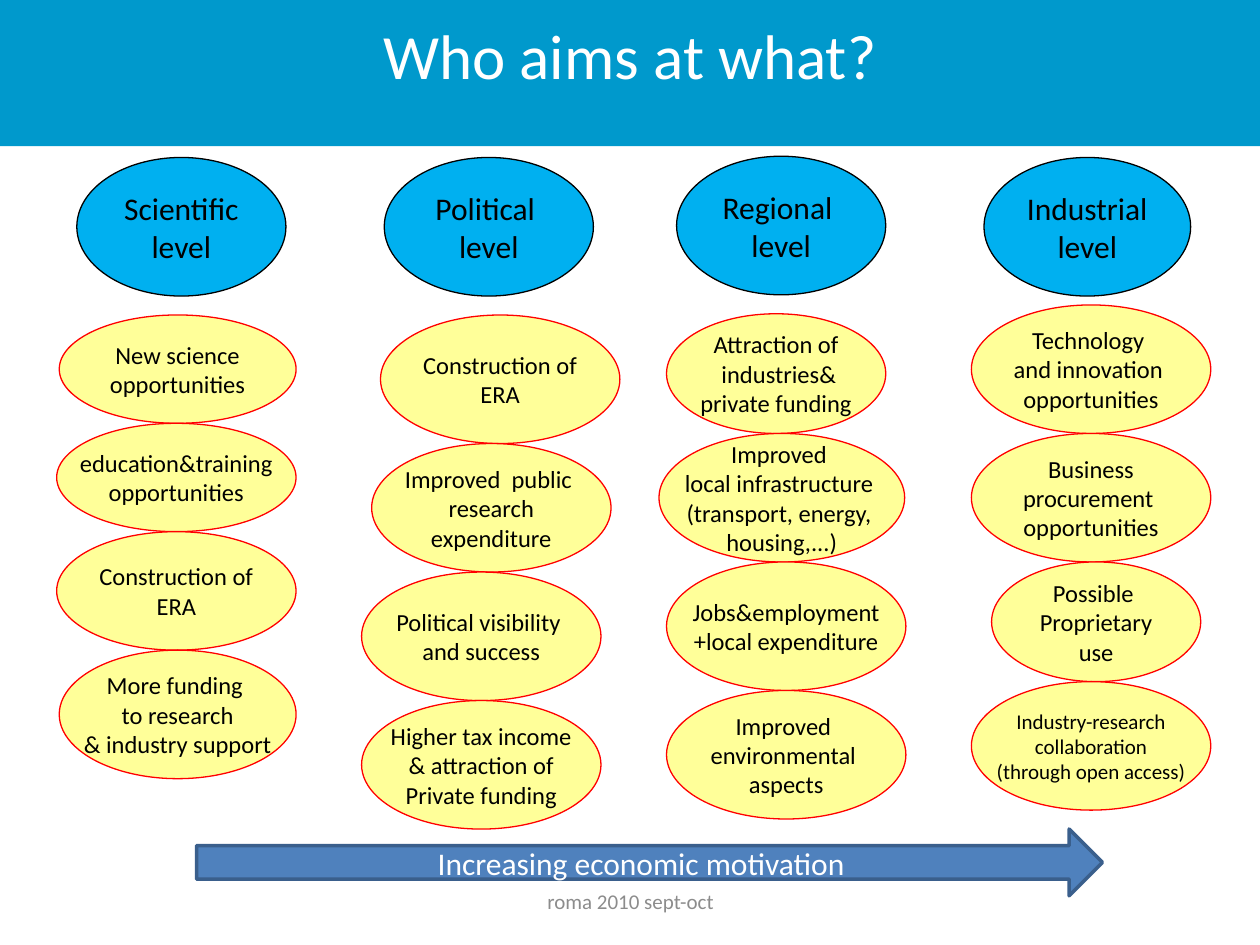
import pptx
import pptx.util
import pptx.dml.color
import pptx.enum.shapes
import pptx.enum.text

Inches, Pt = pptx.util.Inches, pptx.util.Pt
RGB = pptx.dml.color.RGBColor
Kind = pptx.enum.shapes.MSO_SHAPE
Align = pptx.enum.text.PP_ALIGN
Anchor = pptx.enum.text.MSO_ANCHOR

TEAL = RGB(0x00, 0x99, 0xCC)
SKY = RGB(0x00, 0xB0, 0xF0)
CREAM = RGB(0xFF, 0xFF, 0x99)
RED = RGB(0xFF, 0x00, 0x00)
BLUE = RGB(0x4F, 0x81, 0xBD)
NAVY = RGB(0x3A, 0x5F, 0x8C)
GREY = RGB(0x8C, 0x8C, 0x8C)
BLACK = RGB(0, 0, 0)
WHITE = RGB(255, 255, 255)

# Content: each level has a head (text, left, top, width) and a stack of
# aims (text, left, width, height, size) that touch one another from "top" down
TITLE = "Who aims at what?"
ARROW = "Increasing economic motivation"
FOOTER = "roma 2010 sept-oct"
HEAD_H = 1.1
LEVELS = [
    {"head": ("Scientific\nlevel", 0.61, 1.25, 1.66), "top": 2.5, "aims": [
        ("New science\nopportunities", 0.47, 1.88, 0.86, 14),
        ("education&training\nopportunities", 0.45, 1.9, 0.86, 14),
        ("Construction of\nERA", 0.45, 1.9, 0.94, 14),
        ("More funding \nto research\n& industry support", 0.47, 1.88, 1.02, 14)]},
    {"head": ("Political \nlevel", 3.05, 1.25, 1.66), "top": 2.5, "aims": [
        ("Construction of\nERA", 3.02, 1.9, 1.02, 14),
        ("Improved  public \nresearch\nexpenditure", 2.95, 1.9, 1.02, 14),
        ("Political visibility \nand success", 2.87, 1.9, 1.02, 14),
        ("Higher tax income\n& attraction of\nPrivate funding", 2.87, 1.9, 1.02, 14)]},
    {"head": ("Regional \nlevel", 5.37, 1.24, 1.66), "top": 2.49, "aims": [
        ("Attraction of\n industries&\nprivate funding", 5.29, 1.74, 0.95, 14),
        ("Improved \nlocal infrastructure \n(transport, energy, \nhousing,...)",
         5.23, 1.95, 1.02, 14),
        ("Jobs&employment\n+local expenditure", 5.29, 1.9, 1.02, 14),
        ("Improved \nenvironmental \naspects", 5.29, 1.9, 1.02, 14)]},
    {"head": ("Industrial\nlevel", 7.81, 1.25, 1.64), "top": 2.42, "aims": [
        ("Technology \nand innovation \nopportunities", 7.71, 1.9, 1.02, 14),
        ("Business\nprocurement \nopportunities", 7.71, 1.9, 1.02, 14),
        ("Possible \nProprietary\nuse", 7.87, 1.66, 0.95, 14),
        ("Industry-research\ncollaboration\n(through open access)", 7.71, 1.9, 1.02, 12)]},
]


def write(shape, text, size, color, wrap=True):
    frame = shape.text_frame
    frame.text = text
    frame.word_wrap = wrap
    frame.vertical_anchor = Anchor.MIDDLE
    style = {"name": "Calibri", "size": Pt(size)}
    for para in frame.paragraphs:
        para.alignment = Align.CENTER
        for run in para.runs:
            for key, value in style.items():
                setattr(run.font, key, value)
            run.font.color.rgb = color


def draw(slide, kind, box, fill, line=None, width=0.75):
    shape = slide.shapes.add_shape(kind, *map(Inches, box))
    shape.shadow.inherit = False
    shape.fill.solid()
    shape.fill.fore_color.rgb = fill
    if line is None:
        shape.line.fill.background()
    else:
        shape.line.color.rgb = line
        shape.line.width = Pt(width)
    return shape


def main():
    deck = pptx.Presentation()
    deck.slide_width, deck.slide_height = Inches(10), Inches(7.5)
    slide = deck.slides.add_slide(deck.slide_layouts[5])

    # Title on its band
    title = slide.shapes.title
    place = {"left": 0, "top": 0.08, "width": 10, "height": 0.71}
    for key, value in place.items():
        setattr(title, key, Inches(value))
    write(title, TITLE, 36, WHITE)
    band = draw(slide, Kind.RECTANGLE, (0, 0, 10, 1.16), TEAL)
    title.element.addprevious(band.element)

    # Levels with their stacks of aims
    for level in LEVELS:
        text, left, top, width = level["head"]
        head = draw(slide, Kind.OVAL, (left, top, width, HEAD_H), SKY, BLACK)
        write(head, text, 18, BLACK, wrap=False)
        top = level["top"]
        for text, left, width, height, size in level["aims"]:
            aim = draw(slide, Kind.OVAL, (left, top, width, height), CREAM, RED)
            write(aim, text, size, BLACK, wrap=False)
            top += height

    # Arrow and footer
    arrow = draw(slide, Kind.RIGHT_ARROW, (1.56, 6.58, 7.19, 0.53), BLUE, NAVY, 2)
    write(arrow, ARROW, 18, WHITE)
    foot = slide.shapes.add_textbox(*map(Inches, (3.42, 6.95, 3.17, 0.4)))
    write(foot, FOOTER, 12, GREY)

    deck.save("out.pptx")


if __name__ == "__main__":
    main()
